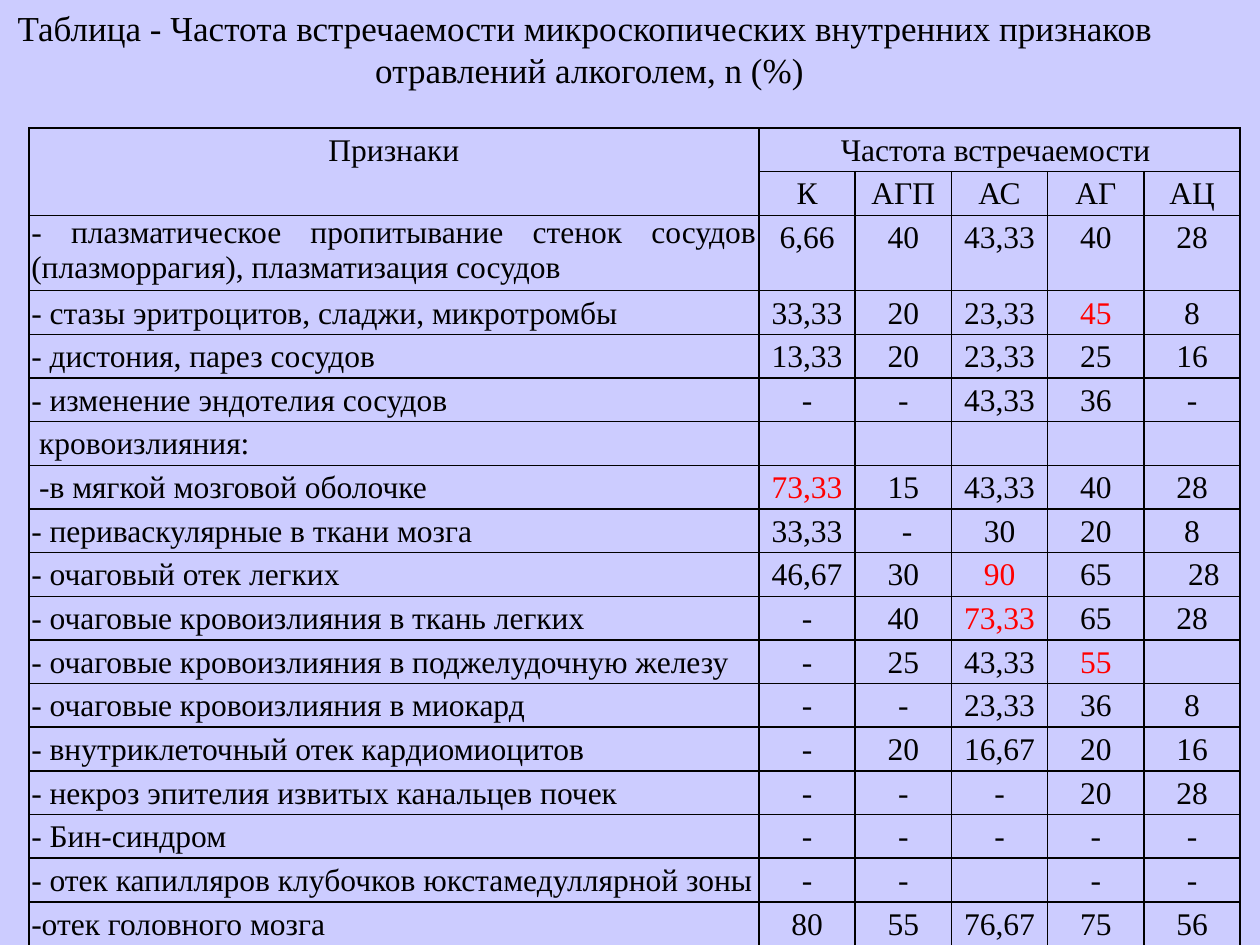
from lxml.etree import SubElement
from pptx import Presentation
from pptx.dml.color import RGBColor
from pptx.enum.text import MSO_ANCHOR, PP_ALIGN as Align
from pptx.oxml.ns import qn
from pptx.util import Cm, Pt

BLACK = RGBColor(0x00, 0x00, 0x00)
RED = RGBColor(0xFF, 0x00, 0x00)
LAVENDER = RGBColor(0xCC, 0xCC, 0xFF)
FONT = "Times New Roman"

TITLE = [
    "Таблица - Частота встречаемости микроскопических внутренних признаков ",
    "отравлений алкоголем, n (%)",
]
GROUPS = ["К", "АГП", "АС", "АГ", "АЦ"]
SIGNS = [
    ("- плазматическое пропитывание стенок сосудов (плазморрагия), плазматизация сосудов",
     ["6,66", "40", "43,33", "40", "28"]),
    ("- стазы эритроцитов, сладжи, микротромбы ", ["33,33", "20", "23,33", "45", "8"]),
    ("- дистония, парез сосудов", ["13,33", "20", "23,33", "25", "16"]),
    ("- изменение эндотелия сосудов", ["-", "-", "43,33", "36", "-"]),
    (" кровоизлияния:", [""] * 5),
    (" -в мягкой мозговой оболочке", ["73,33", "15", "43,33", "40", "28"]),
    ("- периваскулярные в ткани мозга", ["33,33", " -", "30", "20", "8"]),
    ("- очаговый отек легких", ["46,67", "30", "90", "65", "28"]),
    ("- очаговые кровоизлияния в ткань легких", ["-", "40", "73,33", "65", "28"]),
    ("- очаговые кровоизлияния в поджелудочную железу", ["-", "25", "43,33", "55", ""]),
    ("- очаговые кровоизлияния в миокард", ["-", "-", "23,33", "36", "8"]),
    ("- внутриклеточный отек кардиомиоцитов", ["-", "20", "16,67", "20", "16"]),
    ("- некроз эпителия извитых канальцев почек", ["-", "-", "-", "20", "28"]),
    ("- Бин-синдром", ["-"] * 5),
    ("- отек капилляров клубочков юкстамедуллярной зоны", ["-", "-", "", "-", "-"]),
    ("-отек головного мозга", ["80", "55", "76,67", "75", "56"]),
]
HEADER_ROWS = 2
JUSTIFIED_SIGNS = 9
PEAKS = {(3, 4), (7, 1), (9, 3), (10, 3), (11, 4)}
SHIFTED_VALUE = (9, 5)


def style_paragraph(paragraph, size, align, color=BLACK):
    """Set the alignment and font of one paragraph."""
    paragraph.alignment = align
    paragraph.font.name = FONT
    paragraph.font.size = Pt(size)
    paragraph.font.color.rgb = color


def outline_cell(cell):
    """Draw a thin black border on all four sides of a cell."""
    properties = cell._tc.get_or_add_tcPr()
    for side in ("a:lnL", "a:lnR", "a:lnT", "a:lnB"):
        border = SubElement(properties, qn(side), w=str(Pt(1)))
        fill = SubElement(border, qn("a:solidFill"))
        SubElement(fill, qn("a:srgbClr"), val=str(BLACK))
    cell.fill.background()


def fill_cell(cell, text, align, color=BLACK, spacing=1.15):
    """Write one cell with its margins, border and text style."""
    cell.margin_left = cell.margin_right = Cm(0.05)
    cell.margin_top = cell.margin_bottom = 0
    outline_cell(cell)
    cell.text = text
    paragraph = cell.text_frame.paragraphs[0]
    style_paragraph(paragraph, 18, align, color)
    paragraph.line_spacing = spacing
    paragraph.space_after = Pt(10)


def add_title(slide, left, top, width, height):
    """Place the two-line centred heading in the given box."""
    frame = slide.shapes.add_textbox(left, top, width, height).text_frame
    frame.word_wrap = False
    frame.vertical_anchor = MSO_ANCHOR.MIDDLE
    frame.text = "\n".join(TITLE)
    for paragraph in frame.paragraphs:
        style_paragraph(paragraph, 20, Align.CENTER)


def add_frequency_table(slide, left, top, width, height):
    """Place the frequency table in the given box."""
    rows = [["Признаки", "Частота встречаемости "] + [""] * 4, [""] + GROUPS]
    rows += [[sign] + values for sign, values in SIGNS]
    table = slide.shapes.add_table(len(rows), 6, left, top, width, height).table
    table.first_row = table.horz_banding = False

    group_width = Cm(1.94)
    table.columns[0].width = width - group_width * len(GROUPS)
    for column in list(table.columns)[1:]:
        column.width = group_width
    line_height = Cm(0.88)
    for row in table.rows:
        row.height = line_height
    table.rows[HEADER_ROWS].height = height - line_height * (len(rows) - 1)

    for r, texts in enumerate(rows):
        for c, text in enumerate(texts):
            align = Align.CENTER
            if c == 0 and r >= HEADER_ROWS:
                justified = r < HEADER_ROWS + JUSTIFIED_SIGNS
                align = Align.JUSTIFY if justified else Align.LEFT
            color = RED if (r, c) in PEAKS else BLACK
            spacing = 1.0 if (r, c) == (HEADER_ROWS, 0) else 1.15
            fill_cell(table.cell(r, c), text, align, color, spacing)
    table.cell(*SHIFTED_VALUE).margin_left = Cm(0.53)
    table.cell(0, 0).merge(table.cell(1, 0))
    table.cell(0, 1).merge(table.cell(0, len(GROUPS)))


def main():
    """Build and save the presentation."""
    deck = Presentation()
    deck.slide_width, deck.slide_height = Cm(25.4), Cm(19.05)
    slide = deck.slides.add_slide(deck.slide_layouts[6])
    slide.background.fill.solid()
    slide.background.fill.fore_color.rgb = LAVENDER
    add_frequency_table(slide, Cm(0.58), Cm(2.58), Cm(24.42), Cm(16.48))
    add_title(slide, Cm(0), Cm(0), Cm(23.77), Cm(1.96))
    deck.save("out.pptx")


if __name__ == "__main__":
    main()
